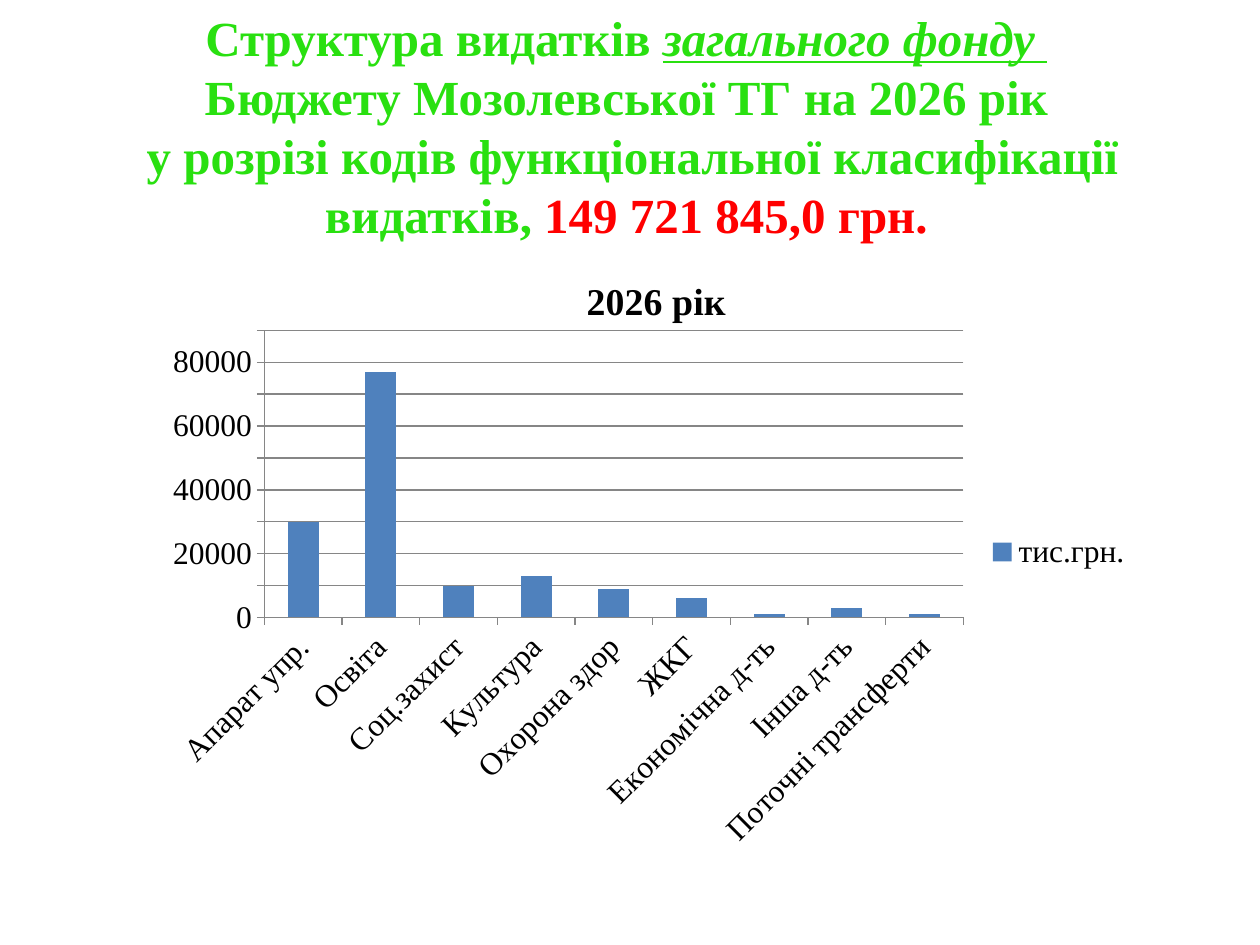
from lxml import etree
from pptx import Presentation
from pptx.chart.data import CategoryChartData
from pptx.dml.color import RGBColor
from pptx.enum.chart import XL_CHART_TYPE, XL_LEGEND_POSITION, XL_TICK_MARK
from pptx.enum.text import MSO_ANCHOR, MSO_AUTO_SIZE, PP_ALIGN
from pptx.oxml.ns import qn
from pptx.util import Cm, Pt

COLUMN = XL_CHART_TYPE.COLUMN_CLUSTERED
RIGHT = XL_LEGEND_POSITION.RIGHT
OUT = XL_TICK_MARK.OUTSIDE
MIDDLE = MSO_ANCHOR.MIDDLE
FIXED = MSO_AUTO_SIZE.NONE
CENTER = PP_ALIGN.CENTER

FONT = "Times New Roman"
COLORS = {
    "green": "29E010",
    "red": "FF0000",
    "black": "000000",
    "bar": "4F81BD",
    "line": "868686",
}
TITLE = [
    [("Структура видатків ", {}),
     ("загального фонду ", {"italic": True, "underline": True})],
    [("Бюджету Мозолевської ТГ на 2026 рік", {})],
    [(" у розрізі кодів функціональної класифікації видатків, ", {}),
     ("149 721 845,0 грн.", {"color": "red"})],
]
COSTS = {
    "Апарат упр.": 30000,
    "Освіта": 77000,
    "Соц.захист": 10000,
    "Культура": 13000,
    "Охорона здор": 9000,
    "ЖКГ": 6000,
    "Економічна д-ть": 1000,
    "Інша д-ть": 3000,
    "Поточні трансферти": 1000,
}


def paint(name):
    return RGBColor.from_string(COLORS[name])


def style(font, size=18, color="black", bold=False, italic=False, underline=False):
    font.name, font.size = FONT, Pt(size)
    font.bold, font.italic, font.underline = bold, italic, underline
    font.color.rgb = paint(color)


def write(para, text, **form):
    run = para.add_run()
    run.text = text
    style(run.font, **form)


def place_title(slide, left, top, width, height):
    shape = slide.shapes.title
    shape.left, shape.top = Cm(left), Cm(top)
    shape.width, shape.height = Cm(width), Cm(height)
    frame = shape.text_frame
    frame.word_wrap, frame.auto_size = True, FIXED
    frame.vertical_anchor = MIDDLE
    for i, runs in enumerate(TITLE):
        para = frame.add_paragraph() if i else frame.paragraphs[0]
        para.alignment, para.line_spacing = CENTER, 1.0
        para.space_before = para.space_after = Pt(0)
        for text, form in runs:
            write(para, text, **{"size": 28, "color": "green", "bold": True, **form})


def fix_place(part, index, **box):
    for old in part.findall(qn("c:layout")):
        part.remove(old)
    layout = etree.Element(qn("c:layout"))
    part.insert(index, layout)
    manual = etree.SubElement(layout, qn("c:manualLayout"))
    for tag, val in box.items():
        etree.SubElement(manual, qn("c:" + tag)).set("val", str(val))


def place_chart(slide, left, top, width, height):
    data = CategoryChartData()
    data.categories = list(COSTS)
    data.add_series("тис.грн.", list(COSTS.values()))
    chart = slide.shapes.add_chart(
        COLUMN, Cm(left), Cm(top), Cm(width), Cm(height), data).chart
    style(chart.font)
    chart.has_title = True
    title = chart.chart_title
    write(title.text_frame.paragraphs[0], "2026 рік", size=21.6, bold=True)
    chart.has_legend = True
    chart.legend.position = RIGHT
    chart.legend.include_in_layout = False

    plot = chart.plots[0]
    plot.gap_width, plot.vary_by_categories = 150, False
    fill = plot.series[0].format.fill
    fill.solid()
    fill.fore_color.rgb = paint("bar")

    cats, vals = chart.category_axis, chart.value_axis
    vals.minimum_scale, vals.maximum_scale, vals.major_unit = 0, 90000, 10000
    vals.has_major_gridlines = True
    for axis in (cats, vals):
        axis.major_tick_mark = OUT
        style(axis.tick_labels.font)
    for part in (cats, vals, vals.major_gridlines):
        part.format.line.color.rgb = paint("line")
        part.format.line.width = Pt(0.75)
    cats._element.find(".//" + qn("a:bodyPr")).set("rot", "-2700000")
    fix_place(title._element, 1, xMode="edge", yMode="edge",
              x=8.59 / width, y=0.51 / height)
    fix_place(plot._element.getparent(), 0, layoutTarget="inner",
              xMode="edge", yMode="edge", x=2.23 / width, y=1.73 / height,
              w=14.09 / width, h=5.79 / height)


def main():
    deck = Presentation()
    deck.slide_width, deck.slide_height = Cm(25.4), Cm(19.05)
    slide = deck.slides.add_slide(deck.slide_layouts[5])
    place_chart(slide, 3.1, 4.93, 19.99, 12.4)
    place_title(slide, 1.12, 0, 23.01, 5.05)
    deck.save("out.pptx")


if __name__ == "__main__":
    main()
